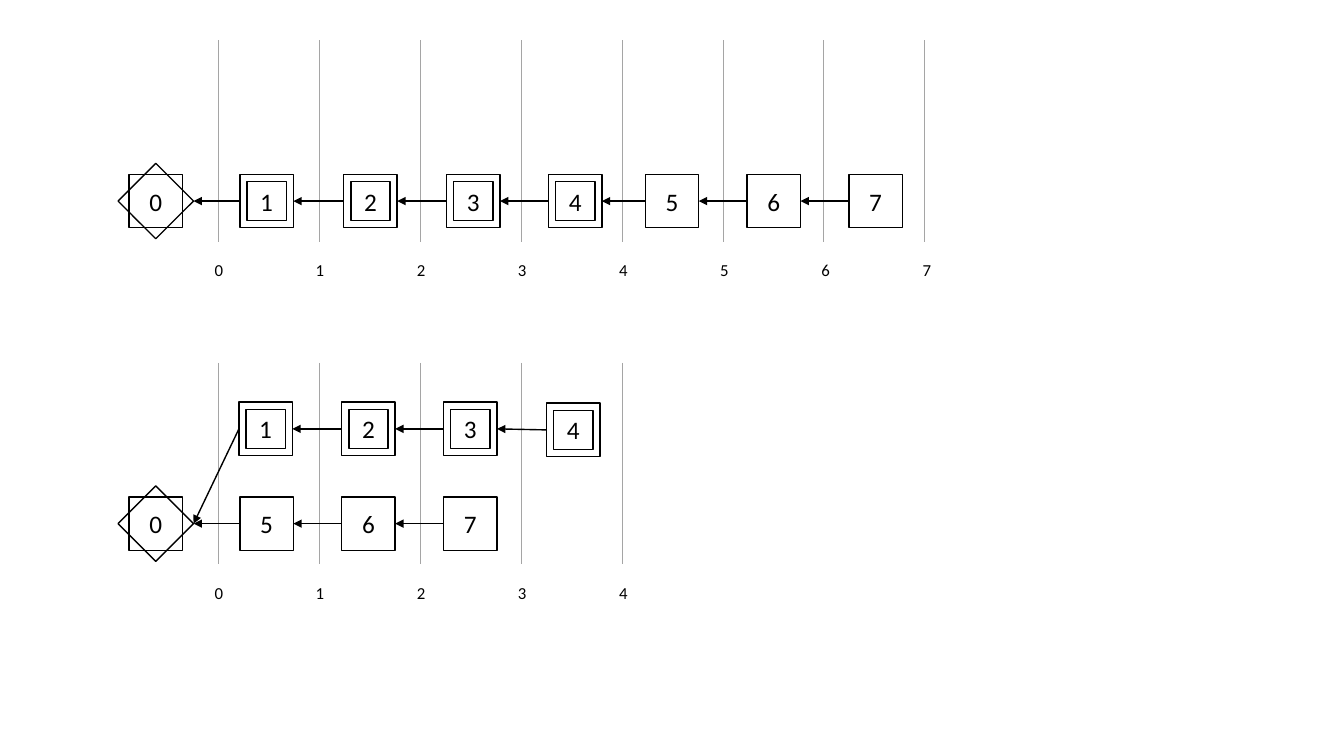
from math import sqrt

from lxml.etree import SubElement
from pptx import Presentation
from pptx.dml.color import RGBColor
from pptx.enum.shapes import MSO_CONNECTOR, MSO_SHAPE
from pptx.enum.text import MSO_ANCHOR, MSO_AUTO_SIZE, PP_ALIGN
from pptx.oxml import parse_xml
from pptx.oxml.ns import nsdecls, qn
from pptx.util import Inches, Pt

BLACK = RGBColor(0x00, 0x00, 0x00)
GRID_GRAY = RGBColor(0xA5, 0xA5, 0xA5)
FONT = "Calibri"
NO_STYLE_NO_GRID = "{2D5ABB26-0587-4C30-8999-92F81FD0307C}"
BLOCK = 0.53
INNER = 0.39
LEFT_SIDE, RIGHT_SIDE = 1, 3
GENESIS_LEFT = -0.89
CHAIN_TOP = 1.33
FORK_TOP = 0.39


def style_text(paragraph, text, size):
    paragraph.text = text
    paragraph.font.name = FONT
    paragraph.font.size = Pt(size)
    paragraph.font.color.rgb = BLACK


def add_square(shapes, left, top, size, label=""):
    square = shapes.add_shape(MSO_SHAPE.RECTANGLE, Inches(left), Inches(top),
                              Inches(size), Inches(size))
    square.shadow.inherit = False
    square.fill.background()
    square.line.color.rgb = BLACK
    square.line.width = Pt(1)
    if label:
        frame = square.text_frame
        frame.vertical_anchor = MSO_ANCHOR.MIDDLE
        style_text(frame.paragraphs[0], label, 18)
        frame.paragraphs[0].alignment = PP_ALIGN.CENTER
    return square


def add_double_block(slide, left, top, label):
    shapes = slide.shapes.add_group_shape().shapes
    block = add_square(shapes, left, top, BLOCK, label)
    inset = (BLOCK - INNER) / 2
    add_square(shapes, left + inset, top + inset, INNER)
    return block


def add_genesis(slide, left, top):
    shapes = slide.shapes.add_group_shape().shapes
    add_square(shapes, left, top, BLOCK, "0")
    add_square(shapes, left, top, BLOCK).rotation = 45
    center = left + BLOCK / 2
    return Inches(center + BLOCK * sqrt(2) / 2), Inches(top + BLOCK / 2)


def add_arrow(slide, block, previous, tip):
    arrow = slide.shapes.add_connector(MSO_CONNECTOR.STRAIGHT, 0, 0, *tip)
    arrow.begin_connect(block, LEFT_SIDE)
    if previous is not None:
        arrow.end_connect(previous, RIGHT_SIDE)
    arrow.line.color.rgb = BLACK
    arrow.line.width = Pt(1)
    SubElement(arrow.line._get_or_add_ln(), qn("a:tailEnd"), type="triangle")
    SubElement(arrow._element.spPr, qn("a:effectLst"))


def add_chain(slide, left, top, tip, blocks):
    previous = None
    for label, offset, drop, is_double in blocks:
        place = left + offset, top + drop
        if is_double:
            block = add_double_block(slide, *place, label)
        else:
            block = add_square(slide.shapes, *place, BLOCK, label)
        add_arrow(slide, block, previous, tip)
        previous = block


def add_cell_borders(cell):
    properties = cell._tc.get_or_add_tcPr()
    for side in ("lnL", "lnR"):
        properties.append(parse_xml(
            f'<a:{side} {nsdecls("a")} w="{Pt(0.5)}"><a:solidFill>'
            f'<a:srgbClr val="{GRID_GRAY}"/></a:solidFill></a:{side}>'))
    cell.fill.background()


def add_grid(slide, left, top, columns):
    table = slide.shapes.add_table(2, columns, Inches(left), Inches(top),
                                   Inches(columns), Inches(2)).table
    table.first_row = False
    table.horz_banding = False
    table._tbl.tblPr.find(qn("a:tableStyleId")).text = NO_STYLE_NO_GRID
    for cell in table.iter_cells():
        add_cell_borders(cell)


def add_time_labels(slide, left, top, count):
    for index in range(count):
        box = slide.shapes.add_textbox(Inches(left + index * 1.003), Inches(top),
                                       Inches(0.29), Inches(0.3))
        box.text_frame.word_wrap = False
        box.text_frame.auto_size = MSO_AUTO_SIZE.SHAPE_TO_FIT_TEXT
        style_text(box.text_frame.paragraphs[0], str(index), 12)


def add_timeline(slide, left, top, columns, chains):
    add_time_labels(slide, left - 0.14, top + 2.13, columns + 1)
    add_grid(slide, left, top, columns)
    tip = add_genesis(slide, left + GENESIS_LEFT, top + CHAIN_TOP)
    for chain_top, blocks in chains:
        add_chain(slide, left, top + chain_top, tip, blocks)


def main():
    presentation = Presentation()
    presentation.slide_width = Inches(13.33)
    presentation.slide_height = Inches(7.5)
    slide = presentation.slides.add_slide(presentation.slide_layouts[6])

    single_chain = [("1", 0.21, 0, True), ("2", 1.24, 0, True),
                    ("3", 2.26, 0, True), ("4", 3.27, 0, True),
                    ("5", 4.23, 0, False), ("6", 5.24, 0, False),
                    ("7", 6.25, 0, False)]
    upper_fork = [("1", 0.2, 0, True), ("2", 1.22, 0, True),
                  ("3", 2.23, 0, True), ("4", 3.25, 0.01, True)]
    lower_fork = [("5", 0.21, 0, False), ("6", 1.22, 0, False),
                  ("7", 2.23, 0, False)]

    add_timeline(slide, 2.17, 0.4, 7, [(CHAIN_TOP, single_chain)])
    add_timeline(slide, 2.17, 3.6, 4,
                 [(FORK_TOP, upper_fork), (CHAIN_TOP, lower_fork)])
    presentation.save("out.pptx")


if __name__ == "__main__":
    main()
